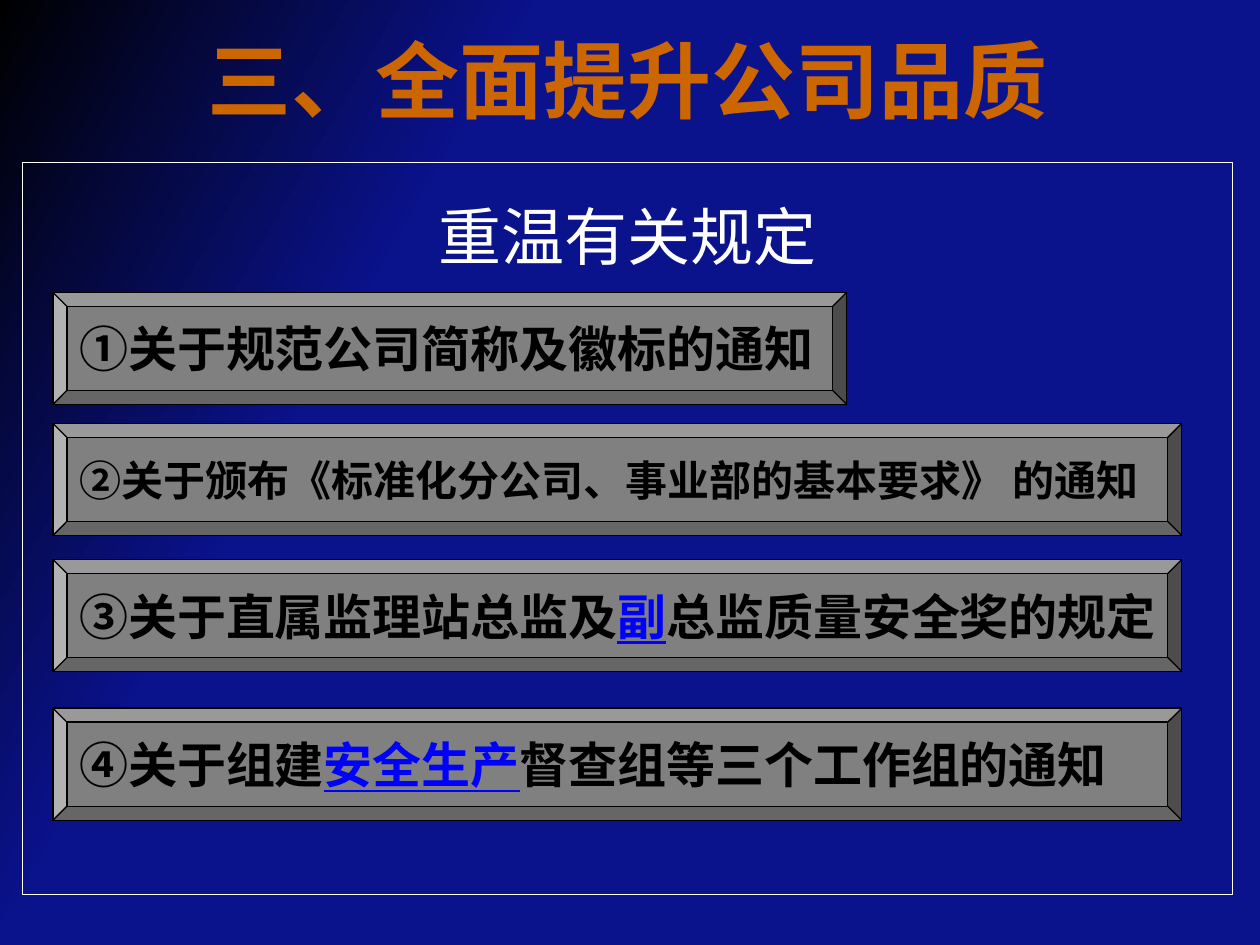
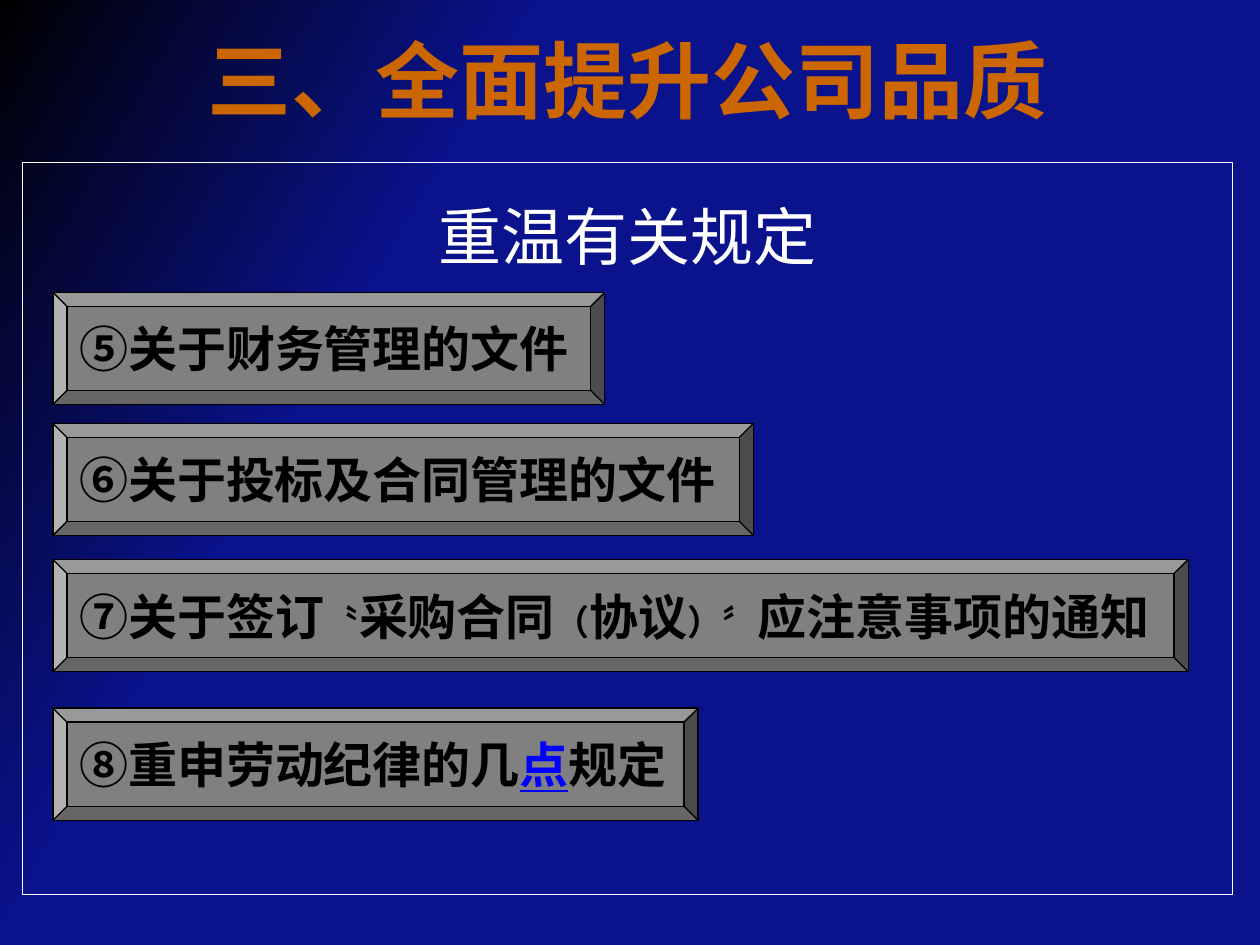
from dataclasses import dataclass

from lxml.etree import SubElement
from pptx import Presentation
from pptx.dml.color import RGBColor
from pptx.enum.shapes import MSO_SHAPE as Shape
from pptx.enum.text import MSO_ANCHOR as Anchor, PP_ALIGN as Align
from pptx.oxml.ns import qn
from pptx.util import Inches, Pt

# Shared look
BLACK = RGBColor(0x00, 0x00, 0x00)
NAVY = RGBColor(0x0A, 0x12, 0x8C)
ORANGE = RGBColor(0xCC, 0x66, 0x00)
WHITE = RGBColor(0xFF, 0xFF, 0xFF)
GRAY = RGBColor(0x80, 0x80, 0x80)
LINK_BLUE = RGBColor(0x00, 0x00, 0xFF)
FONT = "Noto Sans CJK SC"
LINE_WIDTH = Pt(0.75)

TITLE = "三、全面提升公司品质"
HEADING = "重温有关规定"
PANEL_LEFT, PANEL_WIDTH = Inches(0.18), Inches(9.6)
BAR_LEFT, BAR_HEIGHT = Inches(0.42), Inches(0.89)
BAR_TOPS = (2.32, 3.36, 4.44, 5.62)
HANGING = Inches(0.49)


@dataclass(frozen=True)
class Phrase:
    text: str
    size: float = 28
    color: RGBColor = BLACK
    bold: bool = True
    underline: bool = False


@dataclass(frozen=True)
class Bar:
    width: float
    phrases: tuple[Phrase, ...]


def linked(text: str) -> Phrase:
    return Phrase(text, color=LINK_BLUE, underline=True)


SLIDES = (
    (
        Bar(6.3, (Phrase("①关于规范公司简称及徽标的通知"),)),
        Bar(8.96, (Phrase("②关于颁布《标准化分公司、事业部的基本要求》 的通知", 24),)),
        Bar(8.96, (Phrase("③关于直属监理站总监及"), linked("副"), Phrase("总监质量安全奖的规定"))),
        Bar(8.96, (Phrase("④关于组建"), linked("安全生产"), Phrase("督查组等三个工作组的通知"))),
    ),
    (
        Bar(4.38, (Phrase("⑤关于财务管理的文件"),)),
        Bar(5.56, (Phrase("⑥关于投标及合同管理的文件"),)),
        Bar(9.01, (Phrase("⑦关于签订"), Phrase("〝", 20), Phrase("采购合同"), Phrase("（", 20),
                   Phrase("协议"), Phrase("）〞", 20), Phrase("应注意事项的通知"))),
        Bar(5.12, (Phrase("⑧重申劳动纪律的几"), linked("点"), Phrase("规定"))),
    ),
)


def write(shape, phrases: tuple[Phrase, ...], alignment: Align, **frame_format) -> None:
    """Fill the first paragraph of a shape with formatted runs."""
    for name, value in frame_format.items():
        setattr(shape.text_frame, name, value)
    paragraph = shape.text_frame.paragraphs[0]
    paragraph.alignment = alignment
    for phrase in phrases:
        run = paragraph.add_run()
        run.text = phrase.text
        font_format = {"name": FONT, "size": Pt(phrase.size), "bold": phrase.bold,
                       "underline": phrase.underline}
        for name, value in font_format.items():
            setattr(run.font, name, value)
        run.font.color.rgb = phrase.color
        SubElement(run._r.get_or_add_rPr(), qn("a:ea"), typeface=FONT)


def outline(shape, color: RGBColor) -> None:
    shape.shadow.inherit = False
    shape.line.color.rgb = color
    shape.line.width = LINE_WIDTH


def add_title(slide) -> None:
    title = slide.shapes.add_textbox(PANEL_LEFT, 0, PANEL_WIDTH, Inches(1.25))
    write(title, (Phrase(TITLE, 48, ORANGE),), Align.CENTER,
          word_wrap=True, vertical_anchor=Anchor.MIDDLE)


def add_panel(slide) -> None:
    panel = slide.shapes.add_shape(
        Shape.RECTANGLE, PANEL_LEFT, Inches(1.29), PANEL_WIDTH, Inches(5.81))
    panel.fill.background()
    outline(panel, WHITE)
    write(panel, (Phrase(HEADING, 36, WHITE, bold=False),), Align.CENTER,
          word_wrap=True, vertical_anchor=Anchor.TOP, margin_top=Inches(0.28))


def add_bar(slide, bar: Bar, top: float) -> None:
    shape = slide.shapes.add_shape(
        Shape.BEVEL, BAR_LEFT, Inches(top), Inches(bar.width), BAR_HEIGHT)
    shape.adjustments[0] = 0.125
    shape.fill.solid()
    shape.fill.fore_color.rgb = GRAY
    outline(shape, BLACK)
    write(shape, bar.phrases, Align.LEFT, word_wrap=False, vertical_anchor=Anchor.MIDDLE)
    properties = shape.text_frame.paragraphs[0]._p.get_or_add_pPr()
    properties.set("marL", str(int(HANGING)))
    properties.set("indent", str(-int(HANGING)))


def set_background(master) -> None:
    fill = master.background.fill
    fill.gradient()
    fill.gradient_angle = 330
    for stop, position, color in zip(fill.gradient_stops, (0, 0.3), (BLACK, NAVY)):
        stop.position = position
        stop.color.rgb = color


def main() -> None:
    presentation = Presentation()
    presentation.slide_width, presentation.slide_height = Inches(10), Inches(7.5)
    set_background(presentation.slide_master)
    for bars in SLIDES:
        slide = presentation.slides.add_slide(presentation.slide_layouts[6])
        add_title(slide)
        add_panel(slide)
        for bar, top in zip(bars, BAR_TOPS):
            add_bar(slide, bar, top)
    presentation.save("out.pptx")


if __name__ == "__main__":
    main()
